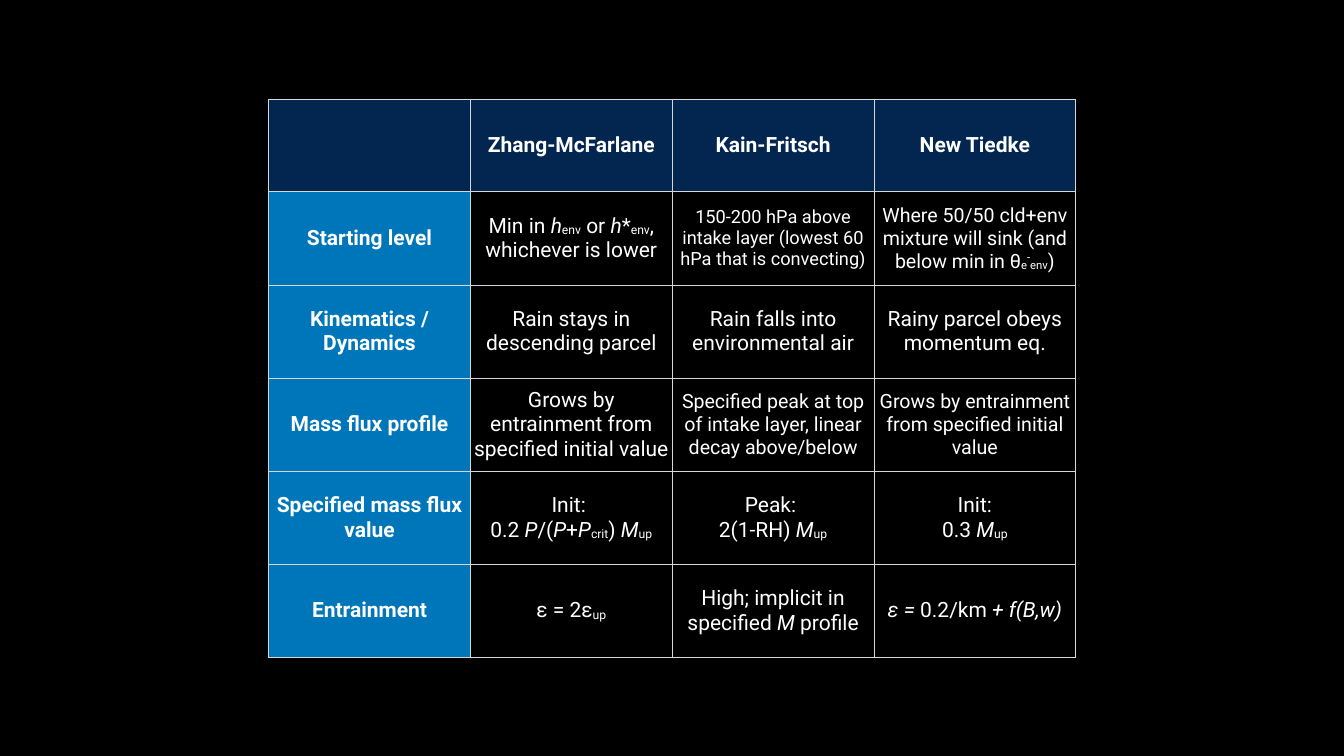
from lxml.etree import SubElement as Sub
from pptx import Presentation
from pptx.dml.color import RGBColor as Rgb
from pptx.enum.text import MSO_ANCHOR as Anchor, PP_ALIGN as Align
from pptx.oxml.ns import qn
from pptx.util import Cm, Pt

NAVY, BLUE, BLACK, WHITE, GREY = "032650", "0076BA", "000000", "FFFFFF", "D6D7D6"
SHIFT = {"_": -6000, "^": 32000}
ROWS = [
    ["", "Zhang-McFarlane", "Kain-Fritsch", "New Tiedke"],
    ["Starting level",
     "Min in |~h|_env| or |~h|*|_env|, whichever is lower",
     "150-200 hPa above intake layer (lowest 60 hPa that is convecting)",
     "Where 50/50 cld+env mixture will sink (and below min in θ|_e|^-|_env|)"],
    ["Kinematics / Dynamics", "Rain stays in descending parcel",
     "Rain falls into environmental air", "Rainy parcel obeys momentum eq."],
    ["Mass flux profile",
     "Grows by entrainment from specified initial value",
     "Specified peak at top of intake layer, linear decay above/below",
     "Grows by entrainment from specified initial value"],
    ["Specified mass flux value",
     "Init: \n0.2 |~P|/(|~P|+|~P|_crit|) |~M|_up",
     "Peak: \n2(1-RH) |~M|_up",
     "Init:\n0.3 |~M|_up"],
    ["Entrainment", "ε = 2ε|_up", "High; implicit in specified |~M| profile",
     "~ε = |0.2/km|~ + f(B,w)"],
]
SIZES = {(1, 2): 26, (1, 3): 28, (3, 2): 28, (3, 3): 28}


def color(code):
    """Turn a hex string into a colour."""
    return Rgb.from_string(code)


def apply(item, values):
    """Set each named attribute of an item."""
    for name, value in values.items():
        setattr(item, name, value)


def paint(fill, code):
    """Give a fill one solid colour."""
    fill.solid()
    fill.fore_color.rgb = color(code)


def write(frame, text, size, bold):
    """Write lines of runs split by bars: ~ italic, _ lowered, ^ raised."""
    for num, line in enumerate(text.split("\n")):
        para = frame.add_paragraph() if num else frame.paragraphs[0]
        para.alignment = Align.CENTER
        for part in filter(None, line.split("|")):
            mark = part[0] if part[0] in "~_^" else ""
            run = para.add_run()
            run.text = part[len(mark):]
            apply(run.font, {"name": "Roboto", "size": Pt(size), "bold": bold,
                             "italic": mark == "~"})
            run.font.color.rgb = color(WHITE)
            if mark in SHIFT:
                run.font._element.set("baseline", str(SHIFT[mark]))


def border(cell, widths):
    """Draw the four edges of a cell, ahead of its fill."""
    props = cell._tc.get_or_add_tcPr()
    for place, (side, width) in enumerate(widths.items()):
        line = Sub(props, qn(f"a:ln{side}"), w=str(Pt(width)))
        fill = Sub(line, qn("a:solidFill"))
        Sub(fill, qn("a:srgbClr"), val=GREY)
        props.insert(place, line)


def grid(slide, left, top, width, height):
    """Build the table of schemes inside the given box."""
    table = slide.shapes.add_table(
        len(ROWS), len(ROWS[0]), left, top, width, height).table
    apply(table, {"first_row": False, "horz_banding": False})
    for row, texts in enumerate(ROWS):
        for col, text in enumerate(texts):
            cell = table.cell(row, col)
            apply(cell, {"vertical_anchor": Anchor.MIDDLE}
                  | {f"margin_{side}": Cm(0.14)
                     for side in ("left", "right", "top", "bottom")})
            write(cell.text_frame, text, SIZES.get((row, col), 30),
                  row == 0 or col == 0)
            if row == 0 or col == 0:
                paint(cell.fill, BLUE if row else NAVY)
            else:
                cell.fill.background()
            border(cell, {"L": 2 if row and col == 1 else 1,
                          "R": 2 if row and col == 0 else 1,
                          "T": 2 if row == 1 else 1,
                          "B": 2 if row == 0 else 1})


def main():
    """Make the slide and save it."""
    deck = Presentation()
    apply(deck, {"slide_width": Cm(67.74), "slide_height": Cm(38.1)})
    slide = deck.slides.add_slide(deck.slide_layouts[6])
    paint(slide.background.fill, BLACK)
    grid(slide, Cm(13.54), Cm(4.98), Cm(40.68), Cm(28.14))
    deck.save("out.pptx")


if __name__ == "__main__":
    main()
